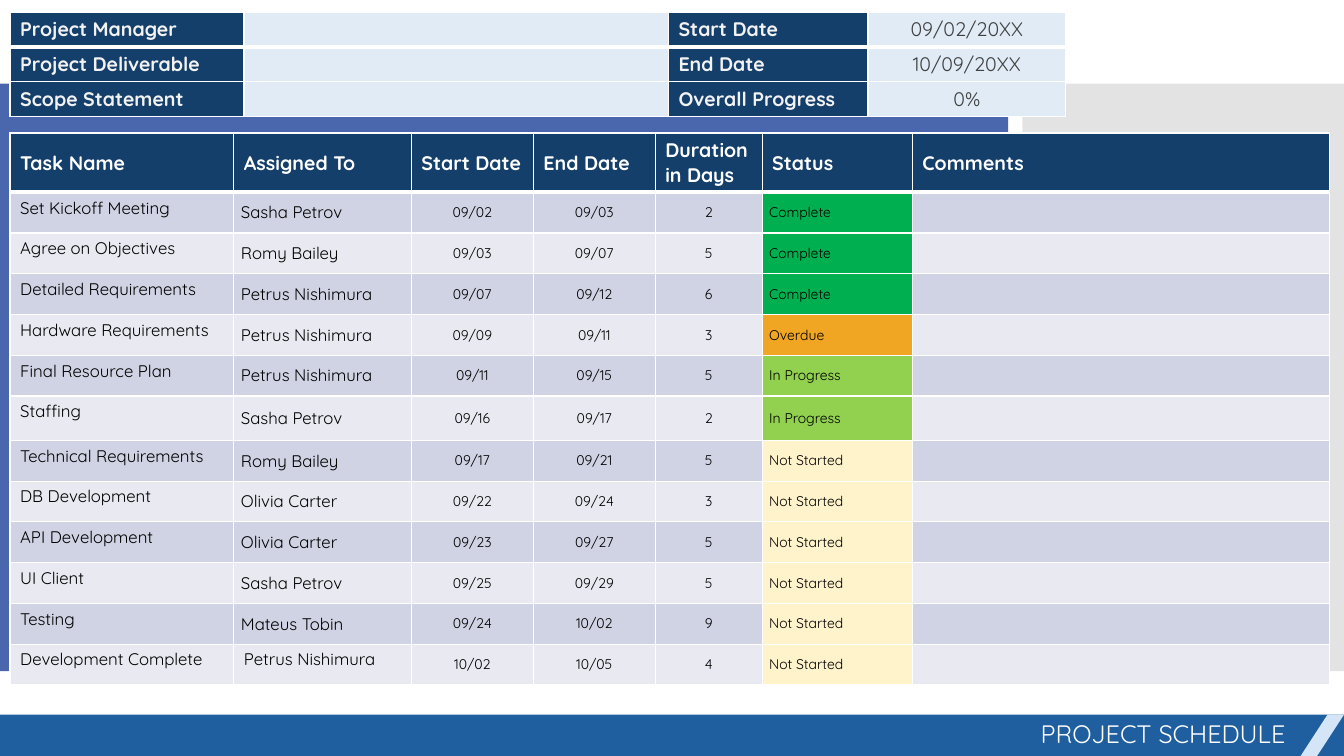
from lxml.etree import SubElement
from pptx import Presentation
from pptx.dml.color import RGBColor
from pptx.enum.shapes import MSO_SHAPE as Shape
from pptx.enum.text import MSO_ANCHOR as Anchor, PP_ALIGN as Align
from pptx.oxml.ns import qn
from pptx.util import Inches, Pt

TITLE = "PROJECT SCHEDULE"
SUMMARY = [
    ("Project Manager", "", "Start Date", "09/02/20XX"),
    ("Project Deliverable", "", "End Date", "10/09/20XX"),
    ("Scope Statement", "", "Overall Progress", "0%"),
]
HEADINGS = ("Task Name", "Assigned To", "Start Date", "End Date",
            "Duration in Days", "Status", "Comments")
TASKS = [
    ("Set Kickoff Meeting", "Sasha Petrov", "09/02", "09/03", "2", "Complete", ""),
    ("Agree on Objectives", "Romy Bailey", "09/03", "09/07", "5", "Complete", ""),
    ("Detailed Requirements", "Petrus Nishimura", "09/07", "09/12", "6", "Complete", ""),
    ("Hardware Requirements", "Petrus Nishimura", "09/09", "09/11", "3", "Overdue", ""),
    ("Final Resource Plan", "Petrus Nishimura", "09/11", "09/15", "5", "In Progress", ""),
    ("Staffing", "Sasha Petrov", "09/16", "09/17", "2", "In Progress", ""),
    ("Technical Requirements", "Romy Bailey", "09/17", "09/21", "5", "Not Started", ""),
    ("DB Development", "Olivia Carter", "09/22", "09/24", "3", "Not Started", ""),
    ("API Development", "Olivia Carter", "09/23", "09/27", "5", "Not Started", ""),
    ("UI Client", "Sasha Petrov", "09/25", "09/29", "5", "Not Started", ""),
    ("Testing", "Mateus Tobin", "09/24", "10/02", "9", "Not Started", ""),
    ("Development Complete", "Petrus Nishimura", "10/02", "10/05", "4", "Not Started", ""),
]

FONT = "Quicksand"
WHITE = RGBColor(0xFF, 0xFF, 0xFF)
BLACK = RGBColor(0x00, 0x00, 0x00)
NAVY = RGBColor(0x14, 0x3F, 0x6A)
LABEL = RGBColor(0xF2, 0xF2, 0xF2)
VALUE = RGBColor(0x40, 0x40, 0x40)
PALE_BLUE = RGBColor(0xE0, 0xEB, 0xF6)
BANDS = (RGBColor(0xD0, 0xD3, 0xE3), RGBColor(0xE9, 0xEA, 0xF1))
BACK_BLUE = RGBColor(0x4A, 0x66, 0xAC)
BACK_GREY = RGBColor(0xC8, 0xC8, 0xC8)
FOOTER_BLUE = RGBColor(0x1F, 0x5F, 0xA0)
FOOTER_ACCENT = RGBColor(0xD4, 0xE5, 0xF7)
STATUS_COLORS = {
    "Complete": RGBColor(0x00, 0xB0, 0x50),
    "Overdue": RGBColor(0xF0, 0xA6, 0x22),
    "In Progress": RGBColor(0x92, 0xD0, 0x50),
    "Not Started": RGBColor(0xFF, 0xF3, 0xCC),
}

SUMMARY_COLUMNS = (2.32, 4.21, 1.98, 1.96)
SUMMARY_ROWS = (0.34, 0.34, 0.35)
TASK_COLUMNS = (2.22, 1.76, 1.21, 1.21, 1.06, 1.49, 4.14)
SCHEDULE_HEIGHT, HEADING_HEIGHT, STAFFING_HEIGHT = 5.47, 0.58, 0.44
TASK_HEIGHT = (SCHEDULE_HEIGHT - HEADING_HEIGHT - STAFFING_HEIGHT) / (len(TASKS) - 1)
ASSIGNED, DURATION, STATUS = 1, 4, 5


def add_block(slide, kind, left, top, width, height, color):
    block = slide.shapes.add_shape(kind, Inches(left), Inches(top), Inches(width), Inches(height))
    block.shadow.inherit = False
    block.fill.solid()
    block.fill.fore_color.rgb = color
    block.line.fill.background()
    return block


def add_grid(slide, top, columns, rows):
    frame = slide.shapes.add_table(len(rows), len(columns), Inches(0.1), Inches(top),
                                   Inches(sum(columns)), Inches(sum(rows)))
    grid = frame.table
    grid.first_row = grid.horz_banding = False
    for column, width in zip(grid.columns, columns):
        column.width = Inches(width)
    for row, height in zip(grid.rows, rows):
        row.height = Inches(height)
    return grid


def add_borders(cell, row):
    """White 1 pt borders, with a 3 pt rule under the first row."""
    properties = cell._tc.get_or_add_tcPr()
    thick = {0: "B", 1: "T"}.get(row)
    for side in "LRTB":
        line = SubElement(properties, qn(f"a:ln{side}"), w=str(Pt(3 if side == thick else 1)))
        SubElement(SubElement(line, qn("a:solidFill")), qn("a:srgbClr"), val=str(WHITE))


def write_cell(grid, row, column, text, size, color, fill, bold=False,
               align=Align.LEFT, anchor=Anchor.TOP, tight=False):
    cell = grid.cell(row, column)
    add_borders(cell, row)
    cell.fill.solid()
    cell.fill.fore_color.rgb = fill
    cell.vertical_anchor = anchor
    if tight:
        cell.margin_left = cell.margin_right = Inches(0.07)
        cell.margin_top = cell.margin_bottom = 0
    paragraph = cell.text_frame.paragraphs[0]
    paragraph.alignment = align
    if text:
        write_run(paragraph, text, size, color, bold)
    else:
        SubElement(paragraph._p, qn("a:endParaRPr"), sz=str(size * 100))


def write_run(paragraph, text, size, color, bold=False):
    run = paragraph.add_run()
    run.text = text
    run.font.name = FONT
    run.font.size = Pt(size)
    run.font.bold = bold
    run.font.color.rgb = color


def add_summary(slide):
    grid = add_grid(slide, 0.12, SUMMARY_COLUMNS, SUMMARY_ROWS)
    for row, texts in enumerate(SUMMARY):
        for column, text in enumerate(texts):
            if column % 2 == 0:
                write_cell(grid, row, column, text, 14, LABEL, NAVY, bold=True)
            else:
                write_cell(grid, row, column, text, 14, VALUE, PALE_BLUE, align=Align.CENTER)


def add_schedule(slide):
    heights = [HEADING_HEIGHT] + [STAFFING_HEIGHT if task[0] == "Staffing" else TASK_HEIGHT
                                  for task in TASKS]
    grid = add_grid(slide, 1.32, TASK_COLUMNS, heights)
    for column, heading in enumerate(HEADINGS):
        write_cell(grid, 0, column, heading, 14, WHITE, NAVY, bold=True, anchor=Anchor.MIDDLE)
    for row, task in enumerate(TASKS, start=1):
        band = BANDS[(row - 1) % 2]
        for column, text in enumerate(task):
            last_assignee = row == len(TASKS) and column == ASSIGNED
            tight = ASSIGNED <= column <= STATUS and not last_assignee
            write_cell(
                grid, row, column, text,
                size=10 if ASSIGNED < column <= STATUS else 12,
                color=BLACK,
                fill=STATUS_COLORS[text] if column == STATUS else band,
                align=Align.CENTER if ASSIGNED < column <= DURATION else Align.LEFT,
                anchor=Anchor.MIDDLE if tight else Anchor.TOP,
                tight=tight)


def add_title(slide):
    title = slide.shapes.title
    slide.shapes._spTree.append(title._element)  # in front of the footer bar
    title.left, title.top = Inches(5.25), Inches(7.08)
    title.width, title.height = Inches(7.6), Inches(0.4)
    title.text_frame.vertical_anchor = Anchor.MIDDLE
    paragraph = title.text_frame.paragraphs[0]
    paragraph.alignment = Align.RIGHT
    write_run(paragraph, TITLE, 18, WHITE)


def main():
    deck = Presentation()
    deck.slide_width, deck.slide_height = Inches(13.33), Inches(7.5)
    slide = deck.slides.add_slide(deck.slide_layouts[5])

    add_block(slide, Shape.RECTANGLE, 0, 0.83, 10, 5.83, BACK_BLUE)
    grey = add_block(slide, Shape.RECTANGLE, 10.14, 0.83, 3.19, 5.83, BACK_GREY)
    grey_color = grey._element.spPr.find(qn("a:solidFill")).find(qn("a:srgbClr"))
    SubElement(grey_color, qn("a:alpha"), val="50000")
    add_block(slide, Shape.RECTANGLE, 0, 7.09, 13.33, 0.41, FOOTER_BLUE)
    accent = add_block(slide, Shape.PARALLELOGRAM, 12.9, 7.09, 0.43, 0.41, FOOTER_ACCENT)
    accent.adjustments[0] = 0.65

    add_title(slide)
    add_summary(slide)
    add_schedule(slide)
    deck.save("out.pptx")


if __name__ == "__main__":
    main()
